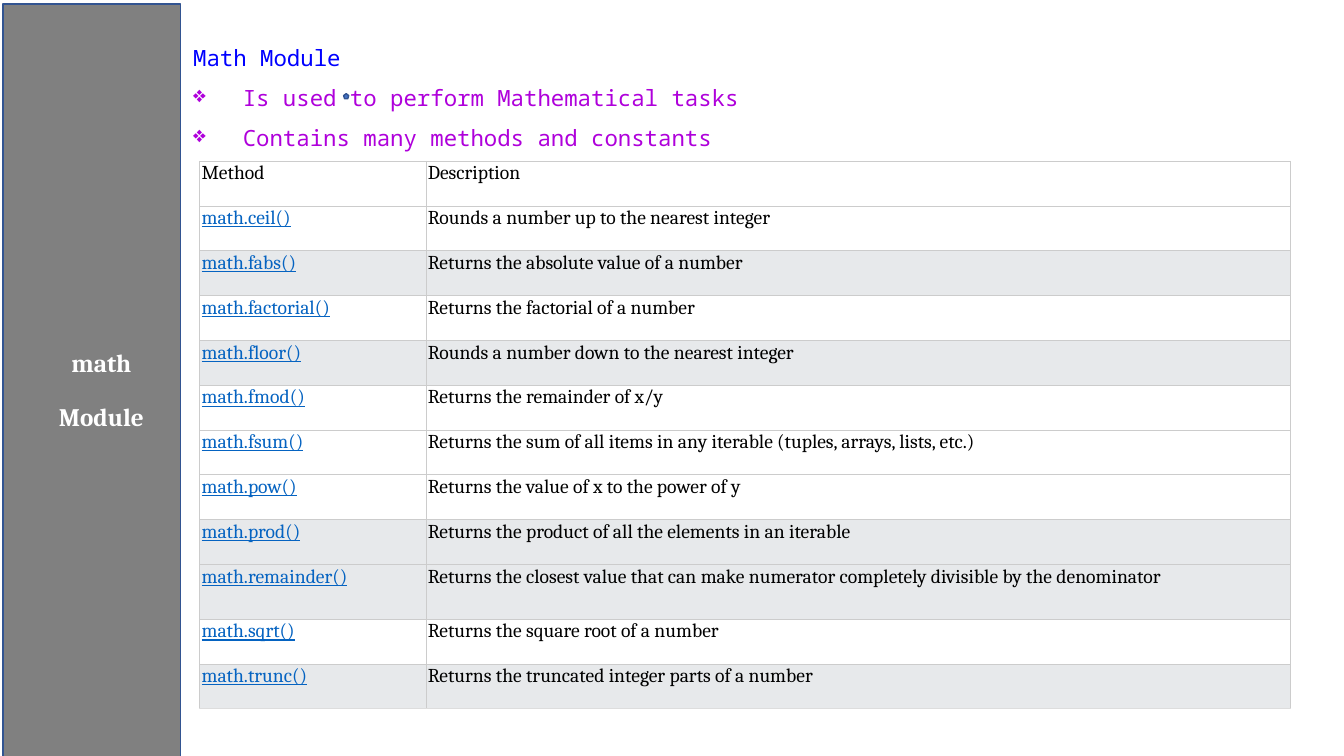
from lxml.etree import SubElement as Sub
from pptx import Presentation
from pptx.dml.color import RGBColor as Rgb
from pptx.enum.shapes import MSO_SHAPE as Kind
from pptx.enum.text import MSO_ANCHOR as Anchor, MSO_AUTO_SIZE as Auto, PP_ALIGN as Align
from pptx.oxml.ns import qn
from pptx.util import Cm, Pt


def paint(part, code):
    if hasattr(part, "solid"):
        part.solid()
        part = part.fore_color
    part.rgb = Rgb.from_string(code)


def write(para, text, code, **look):
    run = para.add_run()
    run.text = text
    for name, value in look.items():
        setattr(run.font, name, value)
    paint(run.font.fill, code)


deck = Presentation()
deck.slide_width, deck.slide_height = Cm(33.87), Cm(19.05)
slide = deck.slides.add_slide(deck.slide_layouts[6])
shapes = slide.shapes

forms = [
    (Kind.RECTANGLE, 0.08, 0.1, 4.47, 19.05, "808080"),
    (Kind.REGULAR_PENTAGON, 8.66, 2.36, 0.13, 0.13, "4472C4"),
]
drawn = []
for kind, left, top, width, height, code in forms:
    form = shapes.add_shape(kind, Cm(left), Cm(top), Cm(width), Cm(height))
    form.shadow.inherit = False
    paint(form.fill, code)
    paint(form.line.fill, "325491")
    form.line.width = Pt(1)
    drawn.append(form)

side = drawn[0].text_frame
side.word_wrap = True
side.vertical_anchor = Anchor.MIDDLE
style = {"alignment": Align.CENTER, "line_spacing": 1.5, "space_before": Pt(6)}
for row, word in enumerate(["math", "Module"]):
    para = side.add_paragraph() if row else side.paragraphs[0]
    for name, value in style.items():
        setattr(para, name, value)
    para._p.get_or_add_pPr().set("marL", str(Cm(0.48)))
    write(para, word, "FFFFFF", name="Cambria", size=Pt(18), bold=True)

intro = shapes.add_textbox(Cm(4.62), Cm(0.64), Cm(28.65), Cm(4.24)).text_frame
intro.word_wrap = True
intro.auto_size = Auto.SHAPE_TO_FIT_TEXT
lines = [
    ("Math Module", "0000FF"),
    ("Is used to perform Mathematical tasks", "AF00DB"),
    ("Contains many methods and constants", "AF00DB"),
]
for row, (text, code) in enumerate(lines):
    para = intro.add_paragraph() if row else intro.paragraphs[0]
    para.line_spacing = 1.5
    if row:
        props = para._p.get_or_add_pPr()
        props.set("marL", str(Cm(1.25)))
        props.set("indent", str(-Cm(1.25)))
        Sub(props, qn("a:buChar"), char="❖")
    write(para, text, code, name="Noto Sans Mono", size=Pt(16))

methods = [
    ("Method", "Description"),
    ("math.ceil()", "Rounds a number up to the nearest integer"),
    ("math.fabs()", "Returns the absolute value of a number"),
    ("math.factorial()", "Returns the factorial of a number"),
    ("math.floor()", "Rounds a number down to the nearest integer"),
    ("math.fmod()", "Returns the remainder of x/y"),
    ("math.fsum()", "Returns the sum of all items in any iterable (tuples, arrays, lists, etc.)"),
    ("math.pow()", "Returns the value of x to the power of y"),
    ("math.prod()", "Returns the product of all the elements in an iterable"),
    ("math.remainder()", "Returns the closest value that can make numerator completely divisible by the denominator"),
    ("math.sqrt()", "Returns the square root of a number"),
    ("math.trunc()", "Returns the truncated integer parts of a number"),
]
shaded = {2, 4, 8, 9, 11}
last = len(methods) - 1
grid = shapes.add_table(len(methods), 2, Cm(5.03), Cm(4.06), Cm(27.49), Cm(13.77)).table
grid.first_row = grid.horz_banding = False
for col, width in enumerate([5.72, 21.77]):
    grid.columns[col].width = Cm(width)

for row, pair in enumerate(methods):
    grid.rows[row].height = Cm(1.38 if pair[0] == "math.remainder()" else 1.13)
    for col, text in enumerate(pair):
        cell = grid.cell(row, col)
        pads = {"left": 0.03 if col else 0.05, "right": 0.03, "top": 0.03, "bottom": 0.03}
        for edge, pad in pads.items():
            setattr(cell, "margin_" + edge, Cm(pad))
        props = cell._tc.get_or_add_tcPr()
        for edge in "LRTB":
            line = Sub(props, qn("a:ln" + edge), w=str(Pt(0.6)))
            tone = "DDDDDD" if edge == "B" and row == last else "CCCCCC"
            Sub(Sub(line, qn("a:solidFill")), qn("a:srgbClr"), val=tone)
        paint(cell.fill, "E7E9EB" if row in shaded else "FFFFFF")
        link = row > 0 and col == 0
        write(cell.text_frame.paragraphs[0], text, "0563C1" if link else "000000",
              name="Cambria", size=Pt(14), underline=link)

deck.save("out.pptx")
